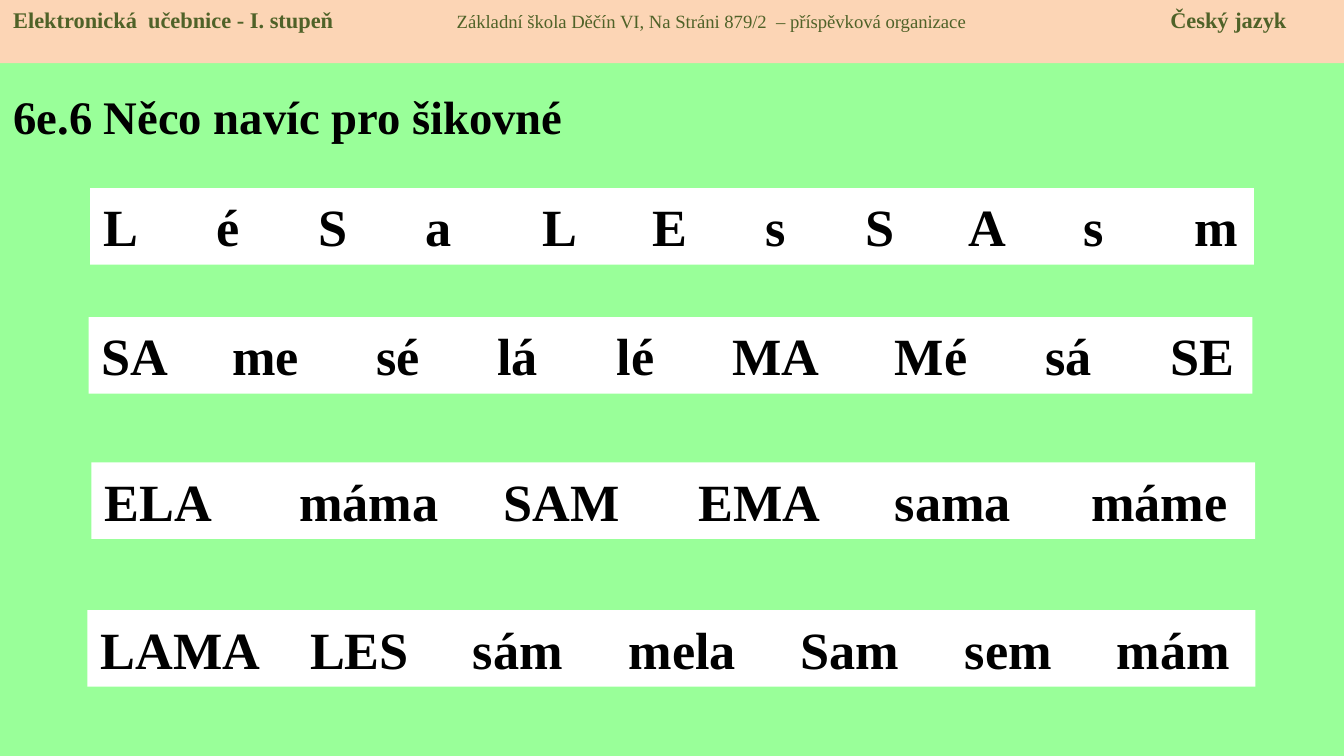
"""Build a reading practice slide with rows of letters, syllables and words."""
from lxml import etree
from pptx import Presentation
from pptx import util as u
from pptx.dml.color import RGBColor
from pptx.enum import shapes, text
from pptx.oxml.ns import qn

GREEN = RGBColor(0x99, 0xFF, 0x99)
PEACH = RGBColor(0xFC, 0xD5, 0xB5)
OLIVE = RGBColor(0x4F, 0x62, 0x28)
WHITE = RGBColor(0xFF, 0xFF, 0xFF)
BLACK = RGBColor(0, 0, 0)
FACE = "Times New Roman"

HEAD = (
    ("Elektronická  učebnice - I. stupeň", 12, True),
    ("\tZákladní škola Děčín VI, Na Stráni 879/2  – příspěvková organizace", 10, False),
    ("\tČeský jazyk", 12, True),
)
ROWS = (
    (0.67, 1.4, 8.66, "L é S a L E s S A s m",
     (0.84, 1.6, 2.4, 3.27, 4.09, 4.93, 5.67, 6.44, 7.29, 8.12)),
    (0.66, 2.36, 8.66, "SA me sé lá lé MA Mé sá SE",
     (0.97, 2.04, 2.94, 3.83, 4.69, 5.9, 7.02, 7.95)),
    (0.68, 3.44, 8.66, "ELA máma SAM EMA sama máme",
     (1.45, 2.97, 4.42, 5.88, 7.34)),
    (0.65, 4.54, 8.69, "LAMA LES sám mela Sam sem mám",
     (1.56, 2.77, 3.93, 5.21, 6.43, 7.56)),
)


def style(font, size, color, bold=True):
    """Set the face, size, colour and weight of a font."""
    font.name = FACE
    font.size = u.Pt(size)
    font.bold = bold
    font.color.rgb = color


def place(shape, left, top, width, height):
    """Move and size a shape, in inches."""
    shape.left, shape.top = u.Inches(left), u.Inches(top)
    shape.width, shape.height = u.Inches(width), u.Inches(height)


def set_tabs(para, stops):
    """Give a paragraph left tab stops, in inches."""
    tabs = etree.Element(qn("a:tabLst"))
    for stop in stops:
        etree.SubElement(tabs, qn("a:tab"), pos=str(u.Inches(stop)), algn="l")
    para._p.get_or_add_pPr().insert(0, tabs)


def add_bar(slide, box, color, stops):
    """Add a plain filled bar and return its tabbed paragraph."""
    bar = slide.shapes.add_shape(
        shapes.MSO_SHAPE.RECTANGLE, *(u.Inches(n) for n in box))
    bar.shadow.inherit = False
    bar.fill.solid()
    bar.fill.fore_color.rgb = color
    bar.line.fill.background()
    bar.text_frame.vertical_anchor = text.MSO_ANCHOR.TOP
    para = bar.text_frame.paragraphs[0]
    para.alignment = text.PP_ALIGN.LEFT
    set_tabs(para, stops)
    return para


def add_head(slide):
    """Add the header strip with its three parts."""
    para = add_bar(slide, (0, 0, 10, 0.47), PEACH, (3.3, 8.61))
    for words, size, bold in HEAD:
        run = para.add_run()
        run.text = words
        style(run.font, size, OLIVE, bold)


def add_row(slide, left, top, width, words, stops):
    """Add a white row of words set on tab stops."""
    para = add_bar(slide, (left, top, width, 0.57), WHITE, stops)
    para.add_run().text = "\t".join(words.split())
    style(para.font, 28, BLACK)


def set_title(slide):
    """Fill and place the title."""
    title = slide.shapes.title
    place(title, 0, 0.54, 4.69, 0.65)
    frame = title.text_frame
    frame.text = "6e.6 Něco navíc pro šikovné"
    frame.auto_size = text.MSO_AUTO_SIZE.NONE
    frame.vertical_anchor = text.MSO_ANCHOR.MIDDLE
    para = frame.paragraphs[0]
    para.alignment = text.PP_ALIGN.LEFT
    style(para.font, 25, BLACK)


def main():
    """Build and save the slide."""
    deck = Presentation()
    deck.slide_width = u.Inches(10)
    deck.slide_height = u.Inches(10 * 9 / 16)
    slide = deck.slides.add_slide(deck.slide_layouts[5])
    slide.background.fill.solid()
    slide.background.fill.fore_color.rgb = GREEN
    set_title(slide)
    add_head(slide)
    for row in ROWS:
        add_row(slide, *row)
    deck.save("out.pptx")


if __name__ == "__main__":
    main()
